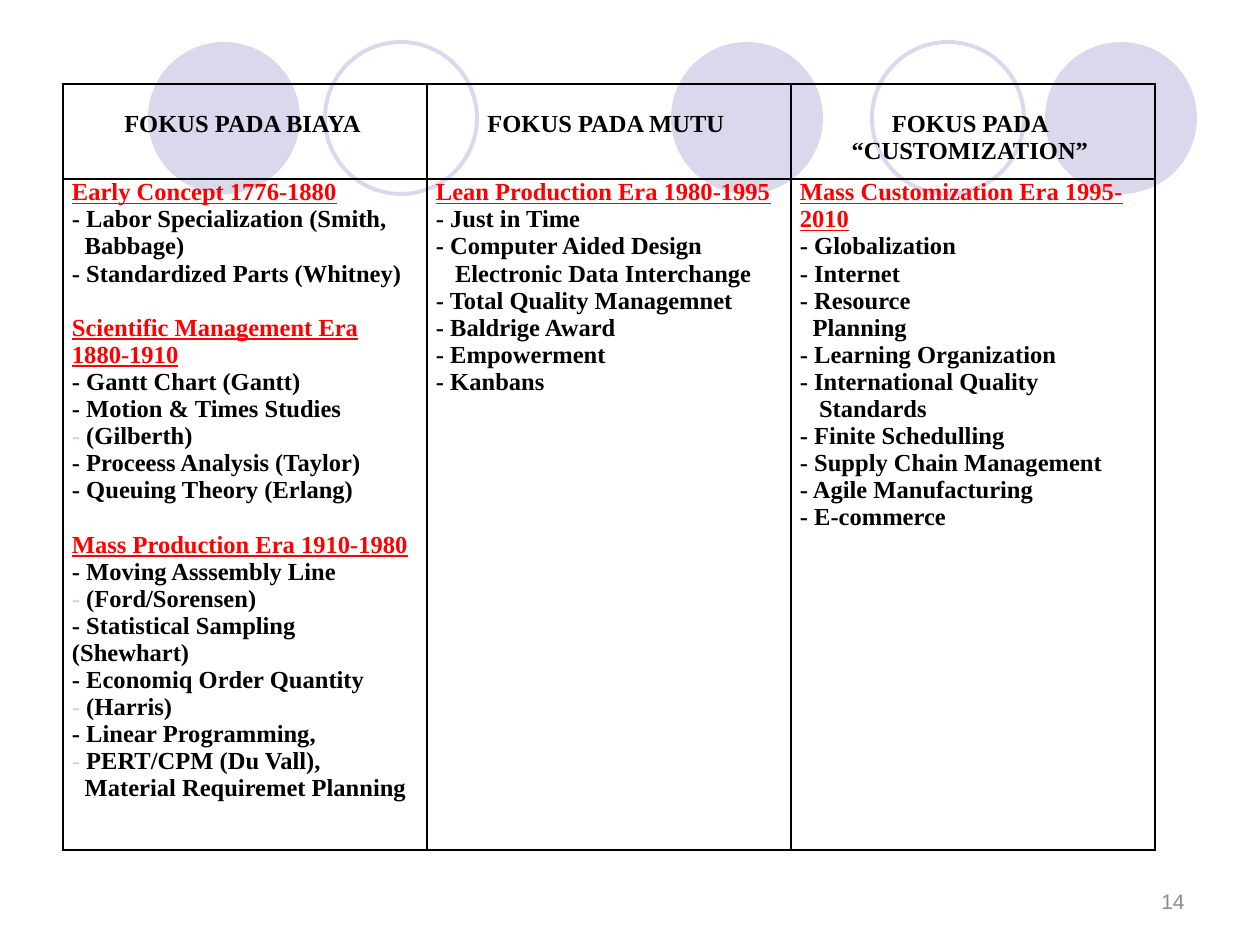
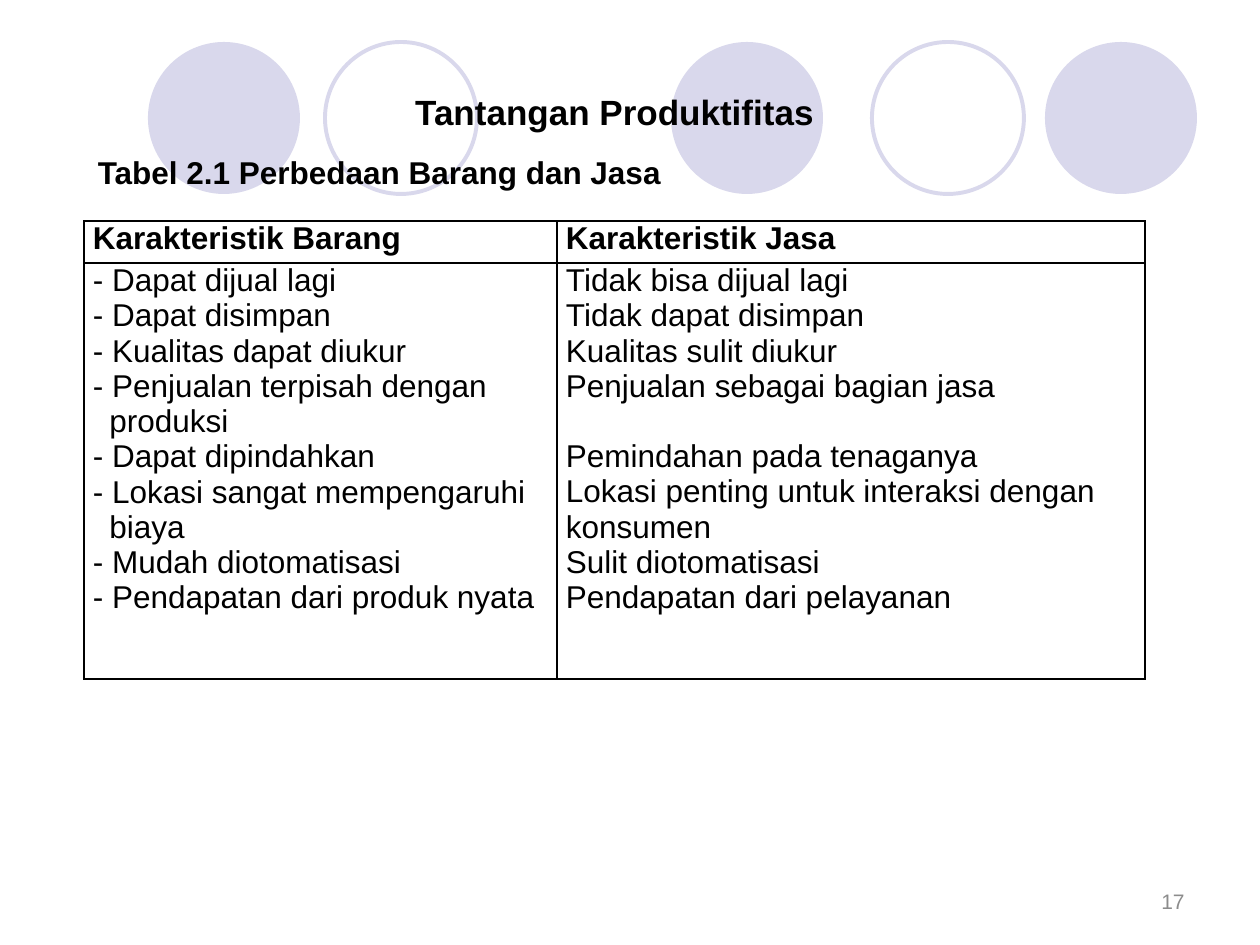
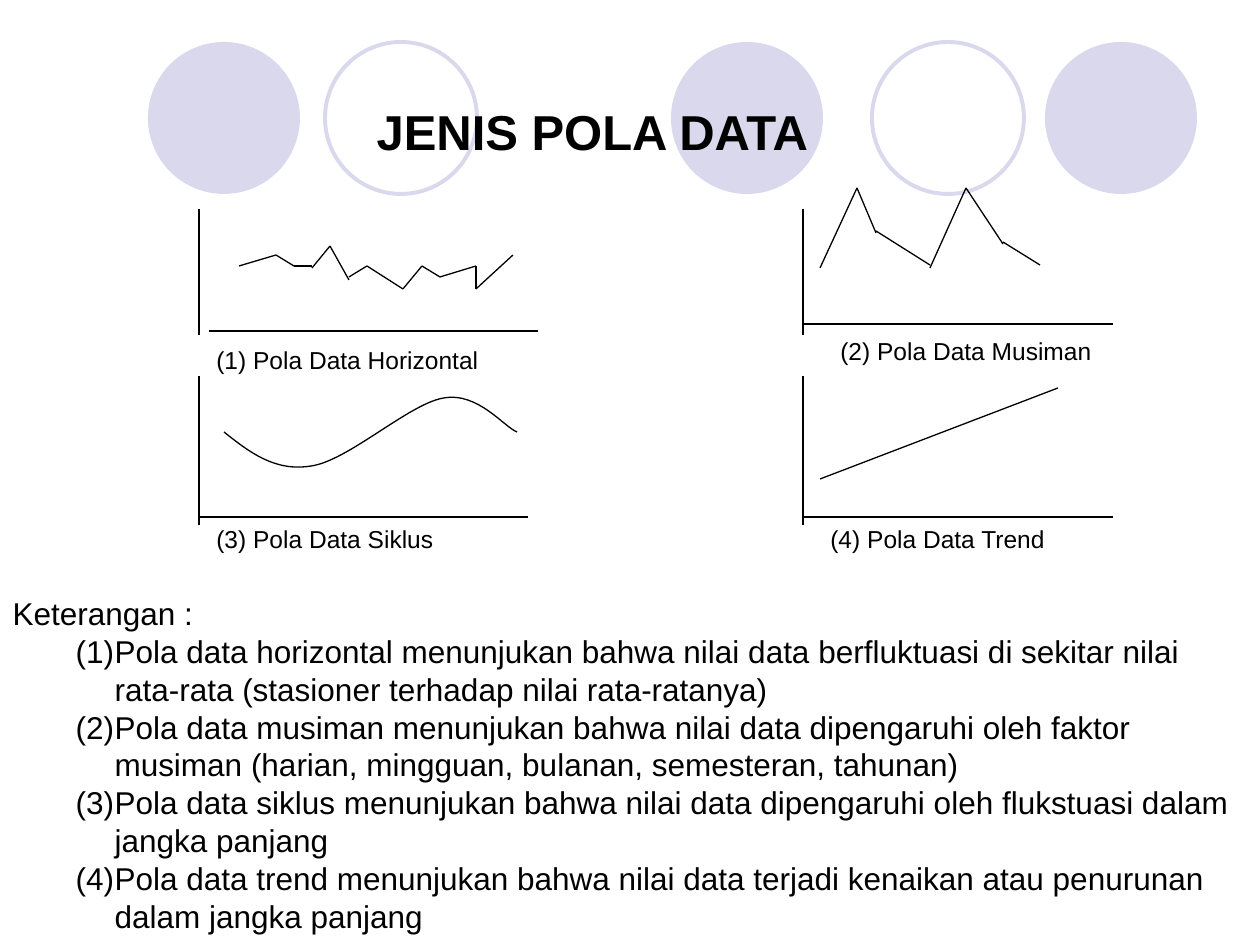
import itertools
import lxml.etree
import pptx
import pptx.dml.color
import pptx.enum.shapes
import pptx.enum.text
import pptx.oxml.ns
import pptx.util

# Shared look
SCALE = 914400 / 126
BLACK, RED, GREY = "000000", "FF0000", "8C8C8C"
LILAC, PALE = "D9D8EC", "CCCCFF"
SANS, SERIF = "Arial", "Times New Roman"
ALIGN = pptx.enum.text.PP_ALIGN
ANCHOR = pptx.enum.text.MSO_ANCHOR
FIT = pptx.enum.text.MSO_AUTO_SIZE
qn = pptx.oxml.ns.qn

# Table cell marks: ^ gap above, # era heading, ~ pale dash, > one step of indent
COST = """#Early Concept 1776-1880
- Labor Specialization (Smith,
>>Babbage)
- Standardized Parts (Whitney)
^#Scientific Management Era 1880-1910
- Gantt Chart (Gantt)
- Motion & Times Studies
~ (Gilberth)
- Proceess Analysis (Taylor)
- Queuing Theory (Erlang)
^#Mass Production Era 1910-1980
- Moving Asssembly Line
~ (Ford/Sorensen)
- Statistical Sampling (Shewhart)
- Economiq Order Quantity
~ (Harris)
- Linear Programming,
~ PERT/CPM (Du Vall),
>>Material Requiremet Planning"""
QUALITY = """#Lean Production Era 1980-1995
- Just in Time
- Computer Aided Design
>>>Electronic Data Interchange
- Total Quality Managemnet
- Baldrige Award
- Empowerment
- Kanbans"""
CUSTOM = """#Mass Customization Era 1995-2010
- Globalization
- Internet
- Resource
>>Planning
- Learning Organization
- International Quality
>>>Standards
- Finite Schedulling
- Supply Chain Management
- Agile Manufacturing
- E-commerce"""
GOODS = """- Dapat dijual lagi
- Dapat disimpan
- Kualitas dapat diukur
- Penjualan terpisah dengan
>>produksi
- Dapat dipindahkan
- Lokasi sangat mempengaruhi
>>biaya
- Mudah diotomatisasi
- Pendapatan dari produk nyata"""
SERVICE = """Tidak bisa dijual lagi
Tidak dapat disimpan
Kualitas sulit diukur
Penjualan sebagai bagian jasa
^Pemindahan pada tenaganya
Lokasi penting untuk interaksi dengan konsumen
Sulit diotomatisasi
Pendapatan dari pelayanan"""
NOTES = [
    "Pola data horizontal menunjukan bahwa nilai data berfluktuasi di sekitar nilai "
    "rata-rata (stasioner terhadap nilai rata-ratanya)",
    "Pola data musiman menunjukan bahwa nilai data dipengaruhi oleh faktor musiman "
    "(harian, mingguan, bulanan, semesteran, tahunan)",
    "Pola data siklus menunjukan bahwa nilai data dipengaruhi oleh flukstuasi dalam "
    "jangka panjang",
    "Pola data trend menunjukan bahwa nilai data terjadi kenaikan atau penurunan "
    "dalam jangka panjang",
]

# Pattern charts: (x, top, bottom) and (left, right, y) of the axes, then the caption
AXES = [
    ((199, 209, 335), (209, 538, 331), (204, 339), "(1) Pola Data Horizontal"),
    ((803, 209, 335), (803, 1113, 324), (828, 330), "(2) Pola Data Musiman"),
    ((199, 376, 525), (199, 528, 517), (204, 518), "(3) Pola Data Siklus"),
    ((803, 376, 525), (803, 1113, 517), (818, 518), "(4) Pola Data Trend"),
]
CHAINS = [
    [(239, 266), (276, 255), (294, 266), (312, 266)],
    [(312, 268), (330, 246), (349, 280)],
    [(349, 277), (367, 266), (403, 289), (422, 266), (440, 277), (476, 266),
     (476, 289), (513, 255)],
    [(820, 268), (857, 188), (876, 233)],
    [(876, 231), (930, 265)],
    [(930, 268), (966, 188), (1003, 244)],
    [(1003, 242), (1040, 265)],
    [(820, 479), (1058, 388)],
]
CYCLE = [(224, 432), (249, 452), (275, 472), (311, 466), (348, 461), (410, 403),
         (444, 398), (478, 392), (504, 427), (517, 432)]


def px(n):
    return round(n * SCALE)


def hue(code):
    return pptx.dml.color.RGBColor.from_string(code)


def style(obj, vals):
    for key, val in vals.items():
        setattr(obj, key, val)


def place(shape, *box):
    style(shape, dict(zip(("left", "top", "width", "height"), map(px, box))))


def child(node, tag, **vals):
    return lxml.etree.SubElement(node, qn(tag), vals)


def stroke(line, width, code=BLACK):
    line.color.rgb = hue(code)
    line.width = pptx.util.Pt(width)


def write(frame, text, size, face=SANS, code=BLACK, font={}, **form):
    """Add one paragraph, using the first one while it is empty."""
    para = frame.add_paragraph() if frame.text else frame.paragraphs[0]
    style(para, form)
    run = para.add_run()
    run.text = text
    style(run.font, {"name": face, "size": pptx.util.Pt(size), **font})
    run.font.color.rgb = hue(code)
    return para


def inset(para, left, hang=0):
    props = para._p.get_or_add_pPr()
    props.set("marL", str(left))
    props.set("indent", str(hang))
    return props


def label(slide, box, text, size, code=BLACK, font={}, wrap=True, mid=False, **form):
    frame = slide.shapes.add_textbox(*map(px, box)).text_frame
    frame.word_wrap = wrap
    frame.vertical_anchor = ANCHOR.MIDDLE if mid else ANCHOR.TOP
    write(frame, text, size, code=code, font=font, **form)


def head(slide, box, text, size, **form):
    title = slide.shapes.title
    place(title, *box)
    style(title.text_frame, {"auto_size": FIT.NONE, "vertical_anchor": ANCHOR.MIDDLE})
    write(title.text_frame, text, size, font={"bold": True}, **form)


def number(slide, text):
    label(slide, (903, 876, 294, 50), text, 12, GREY, mid=True, alignment=ALIGN.RIGHT)


def band(deck, slide):
    """Put the row of circles on the master, behind everything."""
    root = deck.slide_master.shapes.element
    dots = [(671, True), (1045, True), (148, True), (872, False), (325, False)]
    for i, (left, solid) in enumerate(dots):
        dot = slide.shapes.add_shape(pptx.enum.shapes.MSO_SHAPE.OVAL,
                                     *map(px, (left, 42, 152, 152)))
        dot.shadow.inherit = False
        if solid:
            dot.fill.solid()
            dot.fill.fore_color.rgb = hue(LILAC)
            dot.line.fill.background()
        else:
            dot.fill.background()
            stroke(dot.line, 2.25, LILAC)
        dot.element.nvSpPr.cNvPr.set("id", str(100 + i))
        root.insert(2 + i, dot.element)


# Tables
def fill(cell, text, size, face, bold, hang=0, **form):
    for row in text.split("\n"):
        if row.startswith("^"):
            form["space_before"] = pptx.util.Pt(size * 1.11)
        era, dash = "#" in row[:2], row.startswith("~")
        steps = row.count(">")
        font = {"bold": bold, "underline": era}
        para = write(cell.text_frame, row.lstrip("^#~>"), size, face,
                     RED if era else BLACK, font, **form)
        form.pop("space_before", None)
        if steps:
            inset(para, pptx.util.Pt(steps * size * 0.26))
        elif hang:
            inset(para, px(hang), -px(hang))
        if dash:
            props = inset(para, 0)
            child(child(props, "a:buClr"), "a:srgbClr", val=PALE)
            child(props, "a:buFont", typeface=face)
            child(props, "a:buChar", char="-")


def frame(cell):
    props = cell._tc.get_or_add_tcPr()
    for side in "LRTB":
        edge = child(props, "a:ln" + side, w=str(pptx.util.Pt(1)))
        child(child(edge, "a:solidFill"), "a:srgbClr", val=BLACK)
    cell.fill.background()
    style(cell, {"margin_left": px(9), "margin_right": px(9),
                 "margin_top": 0, "margin_bottom": 0})


def grid(slide, left, top, cols, rows):
    table = slide.shapes.add_table(len(rows), len(cols), px(left), px(top),
                                   px(sum(cols)), px(sum(rows))).table
    style(table, {"first_row": False, "horz_banding": False})
    for col, wide in zip(table.columns, cols):
        col.width = px(wide)
    for row, high in zip(table.rows, rows):
        row.height = px(high)
    for cell in table.iter_cells():
        frame(cell)
    return table


# Lines
def join(slide, start, end):
    kind = pptx.enum.shapes.MSO_CONNECTOR.STRAIGHT
    line = slide.shapes.add_connector(kind, *map(px, start + end))
    stroke(line.line, 0.75)
    child(line.element.spPr, "a:effectLst")


def curve(slide, points):
    """Draw a Bezier curve: a start, then three points for each arc."""
    pen = slide.shapes.build_freeform(*points[0], scale=SCALE)
    pen.add_line_segments(points[1:], close=False)
    shape = pen.convert_to_shape()
    shape.shadow.inherit = False
    shape.fill.background()
    stroke(shape.line, 0.75)
    legs = list(shape.element.iter(qn("a:lnTo")))
    for i in range(0, len(legs), 3):
        arc = child(legs[i].getparent(), "a:cubicBezTo")
        for leg in legs[i:i + 3]:
            arc.append(leg[0])
            leg.getparent().remove(leg)


# Slides
def focus(deck):
    slide = deck.slides.add_slide(deck.slide_layouts[6])
    band(deck, slide)
    table = grid(slide, 63, 84, [364] * 3, [95, 671])
    heads = ["FOKUS PADA BIAYA ", "FOKUS PADA MUTU ",
             "FOKUS PADA \n“CUSTOMIZATION” "]
    for i, (top, text) in enumerate(zip(heads, (COST, QUALITY, CUSTOM))):
        table.cell(0, i).margin_top = px(27)
        fill(table.cell(0, i), top, 14, SERIF, True, alignment=ALIGN.CENTER)
        fill(table.cell(1, i), text, 14, SERIF, True)
    number(slide, "14")


def compare(deck):
    slide = deck.slides.add_slide(deck.slide_layouts[5])
    head(slide, (84, 84, 1071, 54), "Tantangan Produktifitas ", 20,
         alignment=ALIGN.CENTER)
    label(slide, (84, 147, 591, 50), "Tabel 2.1 Perbedaan Barang dan Jasa", 18,
          font={"bold": True}, alignment=ALIGN.CENTER)
    table = grid(slide, 84, 221, [473, 588], [42, 416])
    parts = [("Karakteristik Barang", GOODS, 73), ("Karakteristik Jasa", SERVICE, 0)]
    for i, (top, text, hang) in enumerate(parts):
        fill(table.cell(0, i), top, 18, SANS, True)
        fill(table.cell(1, i), text, 18, SANS, False, hang)
    number(slide, "17")


def pattern(deck):
    slide = deck.slides.add_slide(deck.slide_layouts[1])
    head(slide, (364, 95, 461, 72), "JENIS POLA DATA", 28, alignment=ALIGN.LEFT)
    slide.shapes.title.text_frame.word_wrap = False
    for (x, top, base), (left, right, y), spot, text in AXES:
        join(slide, (x, top), (x, base))
        join(slide, (left, y), (right, y))
        label(slide, spot + (288, 43), text, 14, wrap=False)
    for chain in CHAINS:
        for start, end in itertools.pairwise(chain):
            join(slide, start, end)
    curve(slide, CYCLE)

    # Numbered notes
    body = slide.placeholders[1]
    place(body, 0, 588, 1260, 357)
    body.text_frame.auto_size = FIT.NONE
    form = {"line_spacing": 1.0, "space_before": 0}
    para = write(body.text_frame, "Keterangan :", 18, **form)
    child(inset(para, 0), "a:buNone")
    for note in NOTES:
        para = write(body.text_frame, note, 18, level=1, **form)
        props = inset(para, px(102), -px(39))
        child(props, "a:buFont", typeface=SANS)
        child(props, "a:buAutoNum", type="arabicParenBoth")


def main():
    deck = pptx.Presentation()
    style(deck, {"slide_width": px(1260), "slide_height": px(945)})
    focus(deck)
    compare(deck)
    pattern(deck)
    deck.save("out.pptx")


if __name__ == "__main__":
    main()
